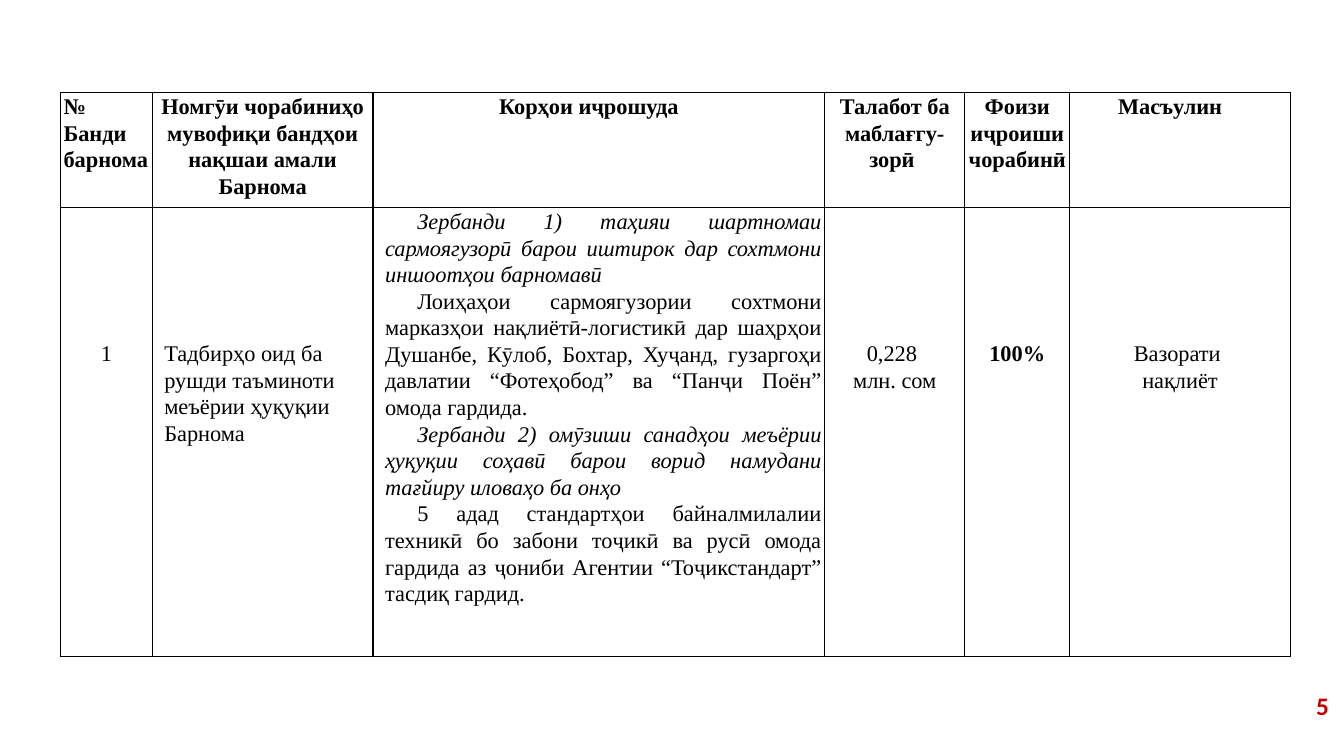
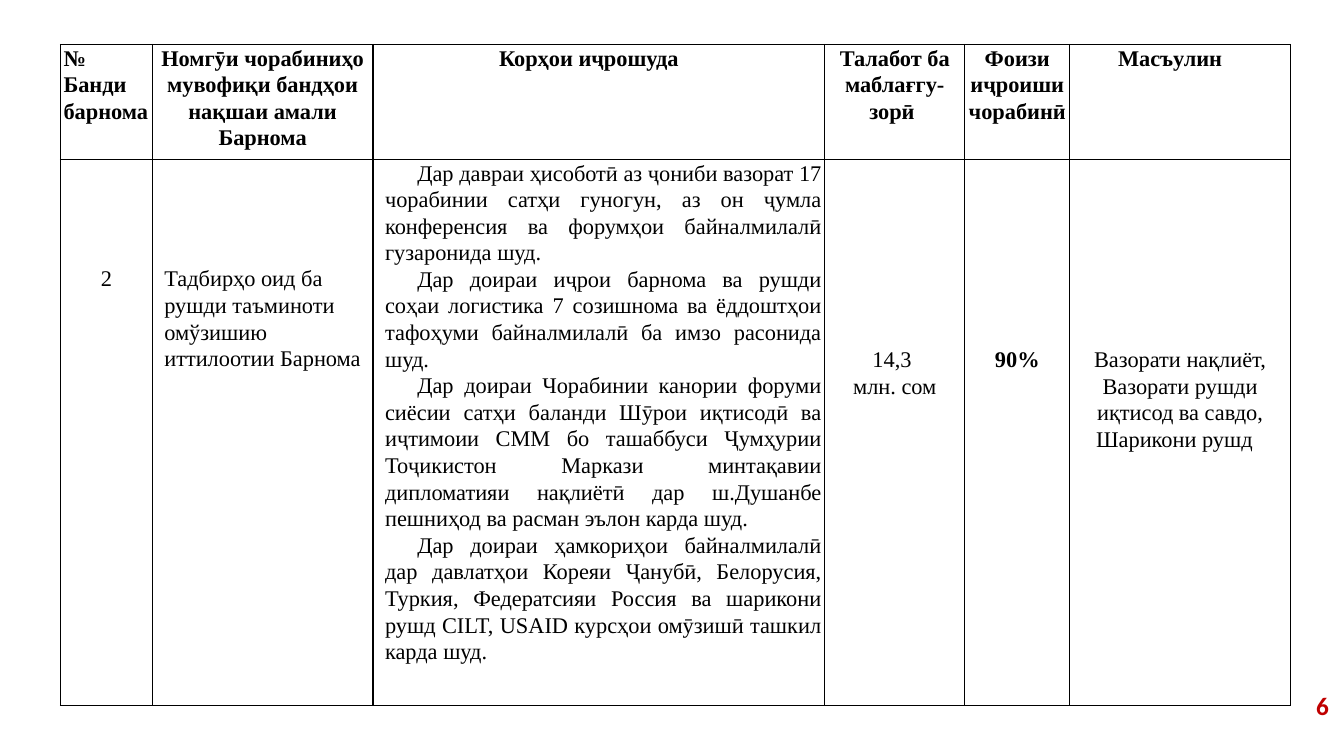
from dataclasses import dataclass

from lxml.etree import SubElement
from pptx import Presentation
from pptx.dml.color import RGBColor
from pptx.enum.text import PP_ALIGN
from pptx.oxml.ns import qn
from pptx.util import Inches, Pt


@dataclass(frozen=True)
class Theme:
    text: str = "000000"
    border: str = "000000"
    background: str = "FFFFFF"
    accent: str = "C00000"
    body_font: str = "Times New Roman"
    number_font: str = "Calibri"
    body_size: int = 16
    number_size: int = 18
    border_width: int = 1
    line_spacing: float = 1.07


THEME = Theme()
LEFT, CENTER, RIGHT, JUSTIFY = PP_ALIGN.LEFT, PP_ALIGN.CENTER, PP_ALIGN.RIGHT, PP_ALIGN.JUSTIFY
COLUMN_WIDTHS = (0.91, 2.19, 4.48, 1.39, 1.04, 2.19)
HEADER_HEIGHT = 1.05
HEADERS = (
    (("№ ", "Банди барнома"), {"align": JUSTIFY}),
    (("Номгӯи чорабиниҳо мувофиқи бандҳои нақшаи амали Барнома",), {"align": CENTER}),
    (("Корҳои иҷрошуда",), {"align": LEFT, "indent": 1.22}),
    (("Талабот ба маблағгу-зорӣ ",), {"align": CENTER}),
    (("Фоизи иҷроиши чорабинӣ",), {"align": CENTER}),
    (("Масъулин",), {"align": LEFT, "indent": 0.45}),
)
BODY_FORMATS = (
    {"align": CENTER},
    {"align": LEFT, "indent": 0.09},
    {"align": JUSTIFY, "indent": 0.09, "first_line": 0.32},
    {"align": CENTER},
    {"align": CENTER, "bold": True},
    {"align": CENTER},
)

SLIDES = (
    {
        "number": "5",
        "box": (0.6, 0.92, 12.2, 5.5),
        "offsets": (1.31, 1.31, 0, 1.31, 1.31, 1.31),
        "italic_lines": (0, 2),
        "row": (
            ("1",),
            ("Тадбирҳо оид ба рушди таъминоти меъёрии ҳуқуқии Барнома",),
            (
                "Зербанди 1) таҳияи шартномаи сармоягузорӣ барои иштирок дар сохтмони иншоотҳои барномавӣ",
                "Лоиҳаҳои сармоягузории сохтмони марказҳои нақлиётӣ-логистикӣ дар шаҳрҳои Душанбе, "
                "Кӯлоб, Бохтар, Хуҷанд, гузаргоҳи давлатии “Фотеҳобод” ва “Панҷи Поён” омода гардида.",
                "Зербанди 2) омӯзиши санадҳои меъёрии ҳуқуқии соҳавӣ барои ворид намудани тағйиру иловаҳо ба онҳо",
                "5 адад стандартҳои байналмилалии техникӣ бо забони тоҷикӣ ва русӣ омода гардида "
                "аз ҷониби Агентии “Тоҷикстандарт” тасдиқ гардид.",
            ),
            ("0,228 ", "млн. сом"),
            ("100%",),
            ("Вазорати ", "нақлиёт"),
        ),
    },
    {
        "number": "6",
        "box": (0.6, 0.44, 12.2, 6.15),
        "offsets": (1.05, 1.05, 0, 1.85, 1.85, 1.85),
        "italic_lines": (),
        "row": (
            ("2",),
            ("Тадбирҳо оид ба рушди таъминоти омўзишию иттилоотии Барнома",),
            (
                "Дар давраи ҳисоботӣ аз ҷониби вазорат 17 чорабинии сатҳи гуногун, аз он ҷумла "
                "конференсия ва форумҳои байналмилалӣ гузаронида шуд.",
                "Дар доираи иҷрои барнома ва рушди соҳаи логистика 7 созишнома ва ёддоштҳои "
                "тафоҳуми байналмилалӣ ба имзо расонида шуд.",
                "Дар доираи Чорабинии канории форуми сиёсии сатҳи баланди Шӯрои иқтисодӣ ва "
                "иҷтимоии СММ бо ташаббуси Ҷумҳурии Тоҷикистон Маркази минтақавии дипломатияи "
                "нақлиётӣ дар ш.Душанбе пешниҳод ва расман эълон карда шуд.",
                "Дар доираи ҳамкориҳои байналмилалӣ дар давлатҳои Кореяи Ҷанубӣ, Белорусия, "
                "Туркия, Федератсияи Россия ва шарикони рушд CILT, USAID курсҳои омӯзишӣ ташкил карда шуд.",
            ),
            ("14,3 ", "млн. сом"),
            ("90%",),
            ("Вазорати нақлиёт, Вазорати рушди иқтисод ва савдо, Шарикони рушд \u00a0",),
        ),
    },
)


def write_text(text_frame, lines, *, align=LEFT, font=THEME.body_font, size=THEME.body_size,
               color=THEME.text, bold=False, italic_lines=(), indent=0, first_line=0,
               line_spacing=THEME.line_spacing):
    text_frame.word_wrap = True
    for index, line in enumerate(lines):
        paragraph = text_frame.paragraphs[0] if index == 0 else text_frame.add_paragraph()
        paragraph.alignment = align
        paragraph.line_spacing = line_spacing
        properties = paragraph._p.get_or_add_pPr()
        properties.set("marL", str(Inches(indent)))
        properties.set("indent", str(Inches(first_line)))
        run = paragraph.add_run()
        run.text = line
        run.font.name = font
        run.font.size = Pt(size)
        run.font.bold = bold
        run.font.italic = index in italic_lines
        run.font.color.rgb = RGBColor.from_string(color)


def style_cell(cell, top_margin=0):
    cell.margin_left = cell.margin_right = Inches(0.03)
    cell.margin_top, cell.margin_bottom = Inches(top_margin), 0
    properties = cell._tc.get_or_add_tcPr()
    for side in ("lnL", "lnR", "lnT", "lnB"):
        line = SubElement(properties, qn(f"a:{side}"), w=str(Pt(THEME.border_width)))
        fill = SubElement(line, qn("a:solidFill"))
        SubElement(fill, qn("a:srgbClr"), val=THEME.border)
    cell.fill.solid()
    cell.fill.fore_color.rgb = RGBColor.from_string(THEME.background)


def add_plan_table(slide, box, row, offsets, italic_lines):
    left, top, width, height = box
    frame = slide.shapes.add_table(2, len(COLUMN_WIDTHS), Inches(left), Inches(top),
                                   Inches(width), Inches(height))
    table = frame.table
    table.first_row = table.horz_banding = False
    table.rows[0].height = Inches(HEADER_HEIGHT)
    table.rows[1].height = Inches(height - HEADER_HEIGHT)
    for index, column_width in enumerate(COLUMN_WIDTHS):
        table.columns[index].width = Inches(column_width)
        header_cell, body_cell = table.cell(0, index), table.cell(1, index)
        header_lines, header_format = HEADERS[index]
        style_cell(header_cell)
        write_text(header_cell.text_frame, header_lines, bold=True, **header_format)
        style_cell(body_cell, offsets[index])
        write_text(body_cell.text_frame, row[index], **BODY_FORMATS[index],
                   italic_lines=italic_lines if index == 2 else ())


def add_page_number(slide, number, box=(12.63, 6.85, 0.55, 0.3)):
    text_frame = slide.shapes.add_textbox(*map(Inches, box)).text_frame
    text_frame.margin_left = text_frame.margin_right = 0
    text_frame.margin_top = text_frame.margin_bottom = 0
    write_text(text_frame, (number,), align=RIGHT, font=THEME.number_font,
               size=THEME.number_size, color=THEME.accent, bold=True, line_spacing=1.0)


def add_plan_slide(presentation, number, box, row, offsets, italic_lines):
    slide = presentation.slides.add_slide(presentation.slide_layouts[6])
    add_page_number(slide, number)
    add_plan_table(slide, box, row, offsets, italic_lines)


def main():
    presentation = Presentation()
    presentation.slide_width = Inches(13.33)
    presentation.slide_height = Inches(7.5)
    for content in SLIDES:
        add_plan_slide(presentation, **content)
    presentation.save("out.pptx")


if __name__ == "__main__":
    main()
